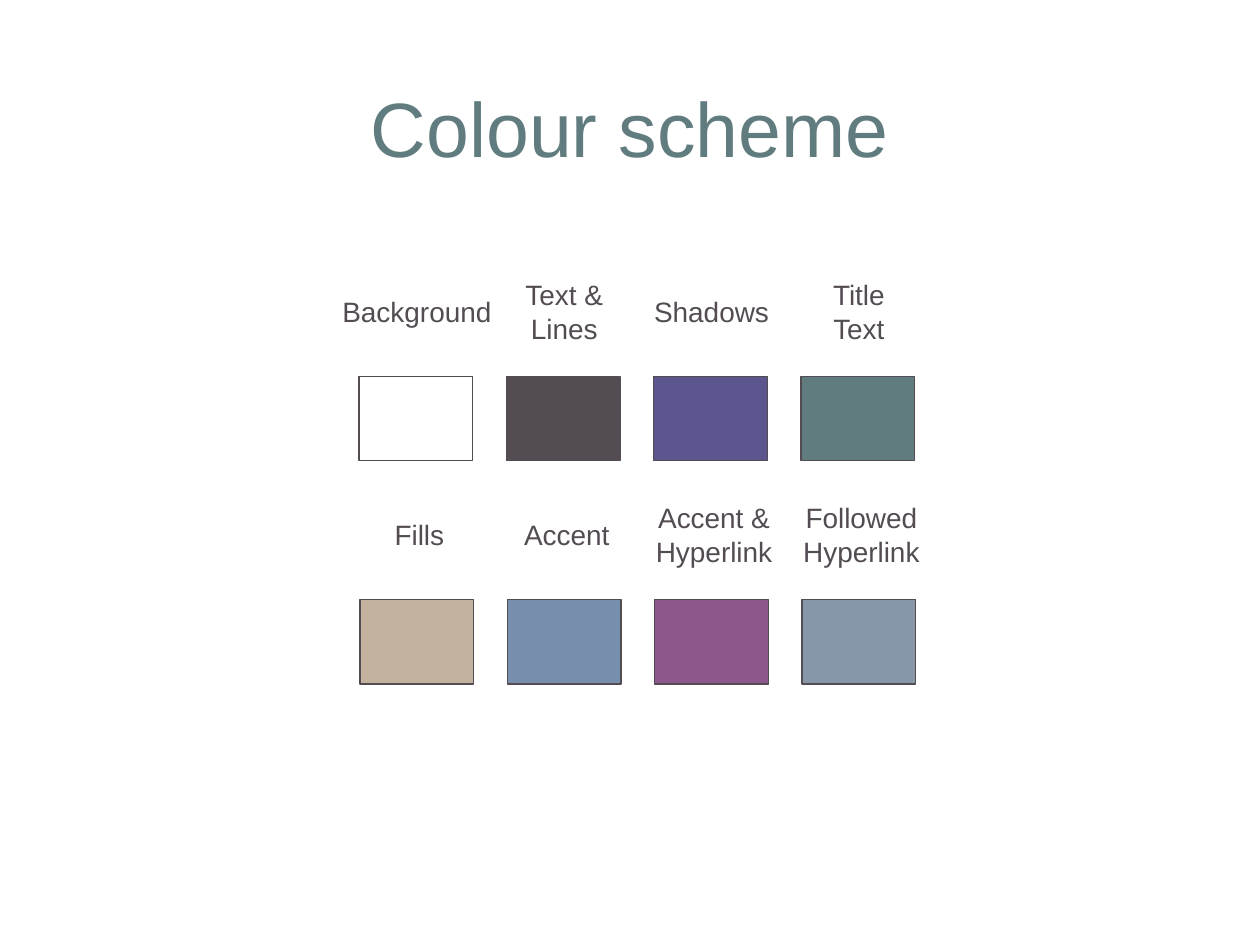
from pptx import Presentation
from pptx import util as u
from pptx.dml.color import RGBColor
from pptx.enum import shapes, text

COLOURS = {
    "background": "FFFFFF",
    "text": "534D53",
    "shadows": "5B578E",
    "title": "617C7F",
    "fills": "C3B29D",
    "accent": "778EAC",
    "hyperlink": "8E578B",
    "followed": "8896A9",
}

SWATCH_W, SWATCH_H, PITCH = 2.29, 1.7, 2.97
LABEL_RISE = 1.31  # from the top of a swatch up to the middle of its label
LINE_H, LABEL_PAD = 0.68, 0.26

# Left and top of each row, label shift, then (label, label width, colour).
# "\n" starts a paragraph, "\v" breaks a line.
ROWS = [
    (7.24, 7.59, 0.02, [
        ("Background", 3.53, "background"),
        ("Text &\nLines", 2.13, "text"),
        ("Shadows", 2.84, "shadows"),
        ("Title\vText", 1.6, "title"),
    ]),
    (7.26, 12.09, 0.05, [
        ("Fills", 1.52, "fills"),
        ("Accent", 2.24, "accent"),
        ("Accent &\nHyperlink", 2.87, "hyperlink"),
        ("Followed\nHyperlink", 2.87, "followed"),
    ]),
]


def rgb(name):
    return RGBColor.from_string(COLOURS[name])


def write(tf, content, size=16, colour="text", font="Arial"):
    """Fill a text frame with centred paragraphs."""
    for i, line in enumerate(content.split("\n")):
        p = tf.add_paragraph() if i else tf.paragraphs[0]
        p.text = line
        p.alignment = text.PP_ALIGN.CENTER
        for f in [p.font] + [r.font for r in p.runs]:
            f.name, f.size = font, u.Pt(size)
            f.color.rgb = rgb(colour)


class SchemeSlide:
    def __init__(self, prs):
        self.s = prs.slides.add_slide(prs.slide_layouts[5])
        self.line_width = u.Pt(0.75)

    def title(self, content, left, top, width, height):
        sp = self.s.shapes.title
        sp.left, sp.top = u.Cm(left), u.Cm(top)
        sp.width, sp.height = u.Cm(width), u.Cm(height)
        sp.text_frame.vertical_anchor = text.MSO_ANCHOR.MIDDLE
        write(sp.text_frame, content, size=44, colour="title")

    def swatch(self, left, top, colour):
        sp = self.s.shapes.add_shape(
            shapes.MSO_SHAPE.RECTANGLE,
            u.Cm(left), u.Cm(top), u.Cm(SWATCH_W), u.Cm(SWATCH_H))
        sp.shadow.inherit = False
        sp.fill.solid()
        sp.fill.fore_color.rgb = rgb(colour)
        sp.line.color.rgb = rgb("text")
        sp.line.width = self.line_width

    def label(self, content, centre_x, centre_y, width):
        height = len(content.splitlines()) * LINE_H + LABEL_PAD
        sp = self.s.shapes.add_textbox(
            u.Cm(centre_x - width / 2), u.Cm(centre_y - height / 2),
            u.Cm(width), u.Cm(height))
        tf = sp.text_frame
        tf.word_wrap = False
        tf.auto_size = text.MSO_AUTO_SIZE.SHAPE_TO_FIT_TEXT
        write(tf, content)


def main():
    prs = Presentation()
    prs.slide_width, prs.slide_height = u.Cm(25.4), u.Cm(19.05)
    slide = SchemeSlide(prs)
    slide.title("Colour scheme", 1.27, 0.97, 22.86, 3.18)
    for left, top, shift, entries in ROWS:
        for col, (name, width, colour) in enumerate(entries):
            x = left + col * PITCH
            slide.swatch(x, top, colour)
            slide.label(name, x + SWATCH_W / 2 + shift, top - LABEL_RISE, width)
    prs.save("out.pptx")


if __name__ == "__main__":
    main()
